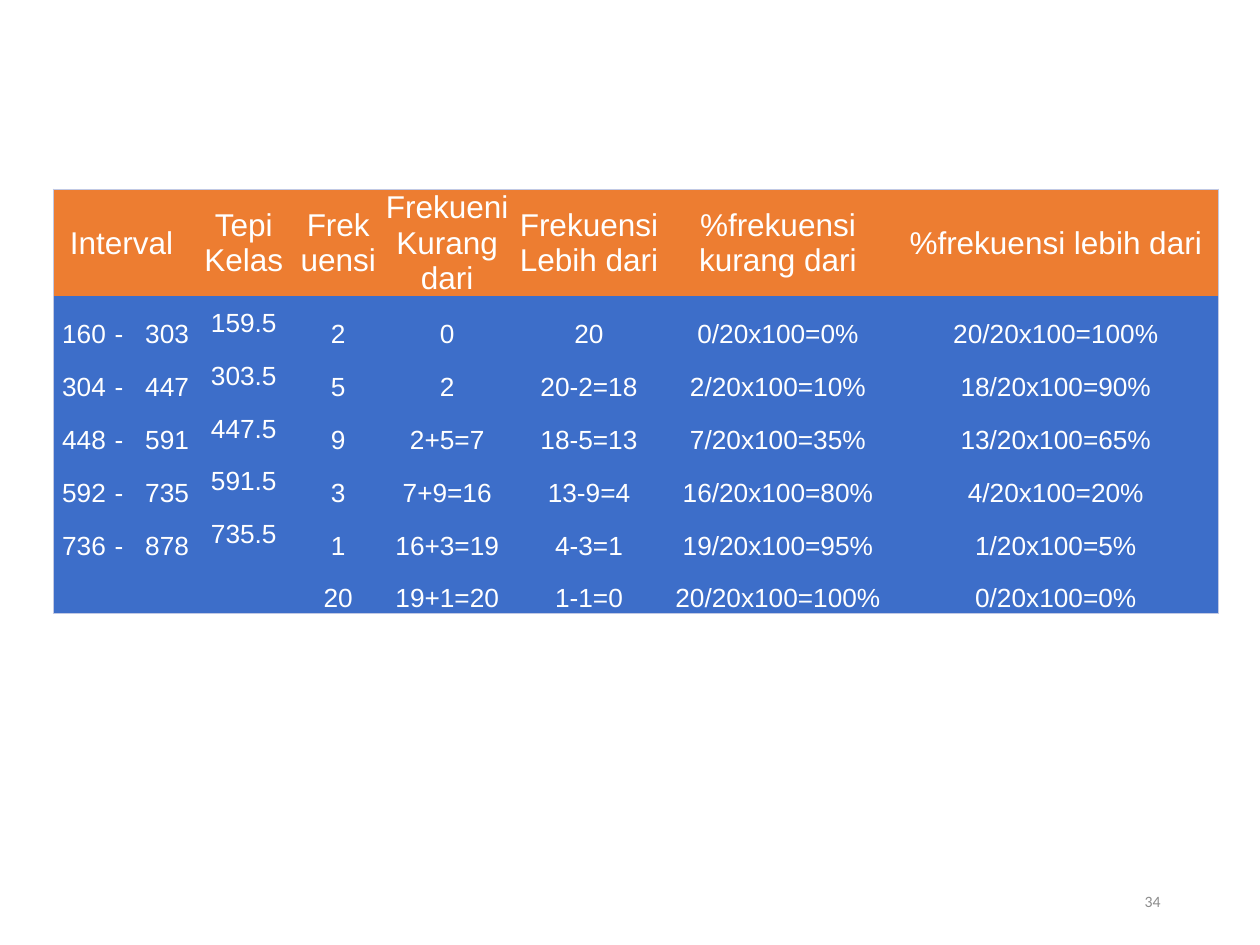
from lxml import etree
from pptx import Presentation
from pptx.dml.color import RGBColor
from pptx.enum.text import MSO_ANCHOR, PP_ALIGN
from pptx.oxml.ns import qn
from pptx.util import Inches, Pt

LEFT, CENTER, RIGHT = PP_ALIGN.LEFT, PP_ALIGN.CENTER, PP_ALIGN.RIGHT
MIDDLE, BOTTOM = MSO_ANCHOR.MIDDLE, MSO_ANCHOR.BOTTOM
COLORS = {"header": "ED7D31", "body": "3D6EC9", "border": "C1C9E4",
          "text": "FFFFFF", "page": "8C8C8C"}
NO_GRID_STYLE = "{2D5ABB26-0587-4C30-8999-92F81FD0307C}"

COLUMN_WIDTHS = [0.43, 0.19, 0.47, 0.85, 0.65, 1.08, 1.17, 1.83, 2.58]
ROW_HEIGHTS = [0.84] + [0.42] * 6
TEPI_COLUMN = 3
ROWS = [
    ["Interval", "", "", "Tepi Kelas", "Frekuensi", "Frekueni Kurang dari",
     "Frekuensi Lebih dari", "%frekuensi kurang dari", "%frekuensi lebih dari"],
    ["160", "-", "303", "159.5", "2", "0", "20", "0/20x100=0%", "20/20x100=100%"],
    ["304", "-", "447", "303.5", "5", "2", "20-2=18", "2/20x100=10%", "18/20x100=90%"],
    ["448", "-", "591", "447.5", "9", "2+5=7", "18-5=13", "7/20x100=35%", "13/20x100=65%"],
    ["592", "-", "735", "591.5", "3", "7+9=16", "13-9=4", "16/20x100=80%", "4/20x100=20%"],
    ["736", "-", "878", "735.5", "1", "16+3=19", "4-3=1", "19/20x100=95%", "1/20x100=5%"],
    ["", "", "", "", "20", "19+1=20", "1-1=0", "20/20x100=100%", "0/20x100=0%"],
]


def write(frame, text, size=15, font="Arial", color="text", align=CENTER):
    paragraph = frame.paragraphs[0]
    paragraph.alignment = align
    paragraph.font.size = Pt(size)
    if text:
        run = paragraph.add_run()
        run.text = text
        run.font.size = Pt(size)
        run.font.name = font
        run.font.color.rgb = RGBColor.from_string(COLORS[color])


def add_border(cell, side):
    line = etree.SubElement(cell._tc.get_or_add_tcPr(), qn(f"a:ln{side}"), w=str(Pt(0.5)))
    fill = etree.SubElement(line, qn("a:solidFill"))
    etree.SubElement(fill, qn("a:srgbClr"), val=COLORS["border"])


prs = Presentation()
prs.slide_width, prs.slide_height = Inches(10), Inches(7.5)
slide = prs.slides.add_slide(prs.slide_layouts[6])

# Frequency table
last_row, last_column = len(ROWS) - 1, len(COLUMN_WIDTHS) - 1
frequency = slide.shapes.add_table(
    len(ROWS), len(COLUMN_WIDTHS), Inches(0.42), Inches(1.5),
    Inches(sum(COLUMN_WIDTHS)), Inches(sum(ROW_HEIGHTS))).table
frequency.horz_banding = False
frequency._tbl.tblPr.find(qn("a:tableStyleId")).text = NO_GRID_STYLE
for column, width in zip(frequency.columns, COLUMN_WIDTHS):
    column.width = Inches(width)
for row, height in zip(frequency.rows, ROW_HEIGHTS):
    row.height = Inches(height)
frequency.cell(0, 0).merge(frequency.cell(0, 2))

for r, values in enumerate(ROWS):
    header = r == 0
    for c, value in enumerate(values):
        cell = frequency.cell(r, c)
        cell.margin_left = cell.margin_right = cell.margin_top = Inches(0.01)
        cell.margin_bottom = 0
        cell.vertical_anchor = MIDDLE if header or c == TEPI_COLUMN else BOTTOM
        # Only the outer edge of the table is ruled
        for side, on_edge in (("L", c == 0), ("R", c == last_column),
                              ("T", header), ("B", r == last_row)):
            if on_edge:
                add_border(cell, side)
        cell.fill.solid()
        cell.fill.fore_color.rgb = RGBColor.from_string(COLORS["header" if header else "body"])
        write(cell.text_frame, value, size=18 if header else 15,
              align=RIGHT if not header and c in (0, 2) else CENTER)

# Page number
page = slide.shapes.add_textbox(Inches(7.06), Inches(6.95), Inches(2.25), Inches(0.4)).text_frame
page.word_wrap = True
page.vertical_anchor = MIDDLE
write(page, "34", size=9, font="Calibri", color="page", align=RIGHT)

prs.save("out.pptx")
